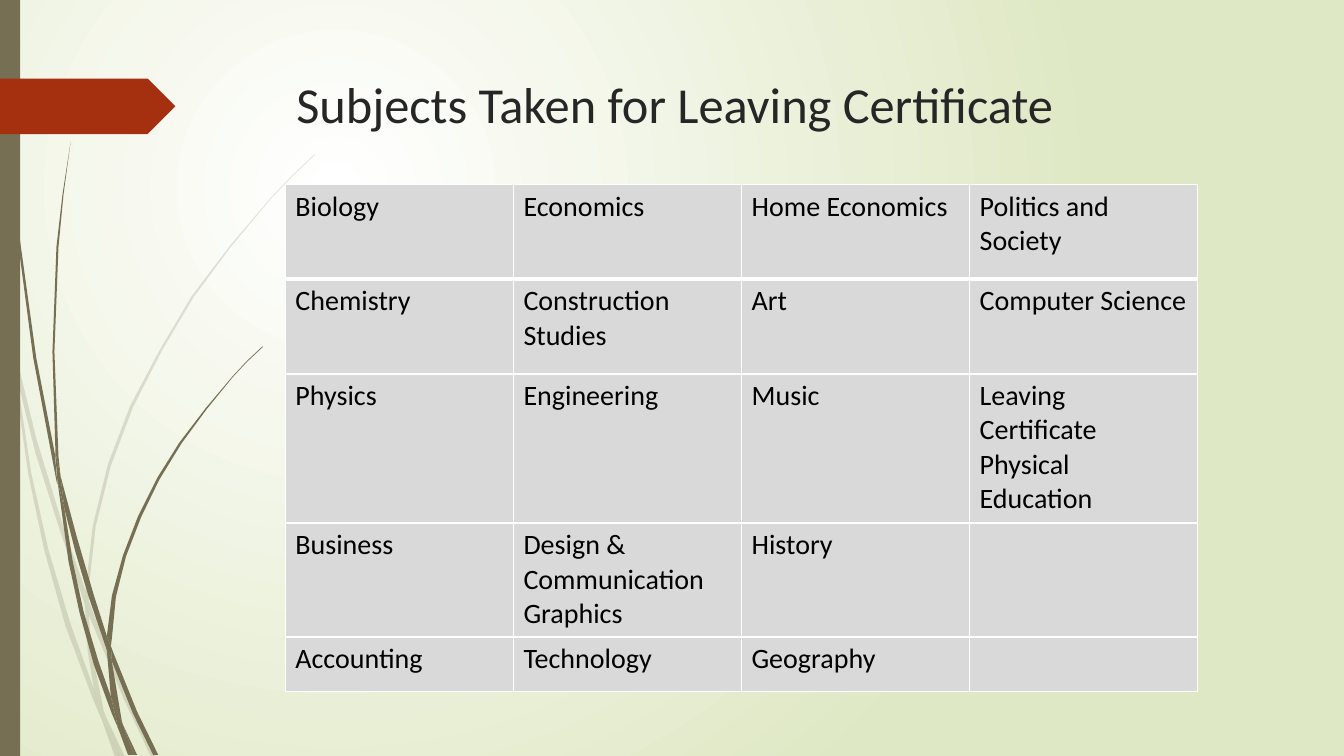
import pptx
import pptx.util
import pptx.dml.color
import pptx.enum.shapes
import pptx.oxml
import pptx.oxml.ns

Inches = pptx.util.Inches
Pt = pptx.util.Pt
qn = pptx.oxml.ns.qn
Shape = pptx.enum.shapes.MSO_SHAPE

COLORS = {
    "stem": "766F54", "tag": "A53010", "title": "262626", "text": "000000",
    "cell": "D9D9D9", "edge": "FFFFFF", "glow": "FFFFFF", "base": "DFE8C4",
}
FONTS = {
    "title": {"name": "Calibri", "size": Pt(36), "bold": False},
    "text": {"name": "Calibri", "size": Pt(20), "bold": False},
}
SUBJECTS = [
    ["Biology", "Economics", "Home Economics", "Politics and Society"],
    ["Chemistry", "Construction Studies", "Art", "Computer Science"],
    ["Physics", "Engineering", "Music", "Leaving Certificate Physical Education"],
    ["Business", "Design & Communication Graphics", "History", ""],
    ["Accounting", "Technology", "Geography", ""],
]
HEIGHTS = [0.94, 0.94, 1.48, 1.13, 0.54]

# Outlines of the grass blades, in inches
PALE = [
    [(0.11, 3.5), (0.09, 3.22), (0, 2.82), (0, 2.99), (0.1, 3.44)],
    [(0.58, 5.22), (0.84, 5.99), (0.85, 5.86), (0.62, 5.2), (0.36, 4.35),
     (0.14, 3.45), (0.17, 3.76), (0.35, 4.49)],
    [(0.92, 6.07), (0.88, 5.96), (0.88, 6.1), (1.23, 6.94), (1.5, 7.51),
     (1.55, 7.51), (1.27, 6.92)],
    [(1.19, 7.51), (1.24, 7.51), (1.05, 7.11)],
    [(0.93, 6.83), (0.7, 6.19), (0.48, 5.45), (0.31, 4.69), (0.17, 3.76),
     (0.11, 3.5), (0.28, 4.7), (0.44, 5.46), (0.65, 6.21), (0.92, 6.93),
     (1.01, 7.14), (0.99, 7.07)],
    [(0.84, 5.99), (0.87, 6.46), (0.93, 6.83), (0.96, 6.92), (1.05, 7.11),
     (1.03, 7.06), (0.91, 6.46), (0.88, 6.1), (0.88, 6.08)],
    [(0.88, 5.84), (0.95, 5.22), (1.1, 4.62), (1.32, 4.04), (1.6, 3.49),
     (1.92, 2.95), (2.29, 2.45), (2.68, 1.98), (2.9, 1.75), (3.12, 1.54),
     (3.12, 1.53), (2.89, 1.75), (2.68, 1.97), (2.28, 2.44), (1.9, 2.94),
     (1.58, 3.48), (1.29, 4.03), (1.07, 4.61), (0.92, 5.22), (0.85, 5.84),
     (0.85, 5.86), (0.88, 5.96)],
    [(1.01, 7.14), (1.14, 7.51), (1.19, 7.51)],
    [(0.88, 6.08), (0.88, 6.1), (0.88, 5.96), (0.85, 5.86), (0.84, 5.99)],
    [(0.96, 6.92), (0.93, 6.83), (0.99, 7.07), (1.01, 7.14), (1.19, 7.51),
     (1.05, 7.11)],
]
DARK = [
    [(0.07, 1.1), (0.17, 2.33), (0.33, 3.55), (0.56, 4.77), (0.57, 4.81),
     (0.55, 4.57), (0.55, 4.53), (0.36, 3.55), (0.19, 2.32), (0.08, 1.09),
     (0.05, 0.48), (0.04, 0), (0.03, 0), (0.04, 0.48)],
    [(0.88, 5.92), (1.06, 6.45), (1.06, 6.33), (1.06, 6.31), (0.93, 5.9),
     (0.76, 5.32), (0.6, 4.72), (0.64, 5.05), (0.75, 5.48)],
    [(1.13, 6.49), (1.1, 6.41), (1.11, 6.56), (1.32, 7.08), (1.52, 7.49),
     (1.57, 7.49), (1.36, 7.06)],
    [(1.1, 6.91), (0.98, 6.57), (0.83, 6.07), (0.72, 5.56), (0.64, 5.05),
     (0.57, 4.77), (0.68, 5.57), (0.79, 6.08), (0.93, 6.59), (1.11, 7.08),
     (1.17, 7.22), (1.16, 7.17)],
    [(0.6, 4.72), (0.58, 4.53), (0.54, 3.49), (0.58, 2.45), (0.63, 1.93),
     (0.7, 1.41), (0.62, 1.93), (0.56, 2.45), (0.52, 3.49), (0.55, 4.49)],
    [(1.33, 7.49), (1.36, 7.49), (1.22, 7.19)],
    [(0.57, 4.77), (0.64, 5.05), (0.6, 4.72), (0.55, 4.49), (0.55, 4.53)],
    [(1.11, 6.33), (1.15, 5.92), (1.25, 5.52), (1.4, 5.13), (1.58, 4.76),
     (1.8, 4.4), (2.05, 4.06), (2.31, 3.74), (2.45, 3.59), (2.61, 3.44),
     (2.6, 3.44), (2.45, 3.58), (2.31, 3.73), (2.04, 4.05), (1.78, 4.39),
     (1.56, 4.74), (1.37, 5.12), (1.22, 5.51), (1.11, 5.91), (1.06, 6.31),
     (1.1, 6.41)],
    [(1.17, 7.22), (1.27, 7.49), (1.31, 7.49)],
    [(1.06, 6.45), (1.1, 6.91), (1.16, 7.06), (1.22, 7.19), (1.21, 7.16),
     (1.11, 6.56), (1.09, 6.51)],
    [(1.06, 6.45), (1.09, 6.51), (1.11, 6.56), (1.1, 6.41), (1.06, 6.31),
     (1.06, 6.33)],
    [(1.16, 7.06), (1.1, 6.91), (1.16, 7.17), (1.17, 7.22), (1.3, 7.49),
     (1.33, 7.49), (1.22, 7.19)],
]


def tint(key):
    return pptx.dml.color.RGBColor.from_string(COLORS[key])


def paint(shape, key):
    shape.shadow.inherit = False
    shape.fill.solid()
    shape.fill.fore_color.rgb = tint(key)
    shape.line.fill.background()


def style(font, kind):
    for name, value in FONTS[kind].items():
        setattr(font, name, value)
    font.color.rgb = tint(kind)


def glow(slide):
    fill = slide.background.fill
    fill.gradient()
    for stop, key, place in zip(fill.gradient_stops, ("glow", "base"), (0, 1)):
        stop.color.rgb = tint(key)
        stop.position = place
    grad = slide.element.find(".//" + qn("a:gradFill"))
    grad.remove(grad.find(qn("a:lin")))
    grad.append(pptx.oxml.parse_xml(
        f'<a:path {pptx.oxml.ns.nsdecls("a")} path="circle"><a:fillToRect '
        'l="50000" t="50000" r="100000" b="100000"/></a:path>'))


def grass(slide, blades, alpha=None):
    group = slide.shapes.add_group_shape()
    for blade in blades:
        spots = [(Inches(x), Inches(y)) for x, y in blade]
        pen = group.shapes.build_freeform(*spots[0])
        pen.add_line_segments(spots[1:], close=True)
        shape = pen.convert_to_shape()
        paint(shape, "stem")
        if alpha:
            color = shape.element.spPr.find(".//" + qn("a:srgbClr"))
            color.append(pptx.oxml.parse_xml(
                f'<a:alpha {pptx.oxml.ns.nsdecls("a")} val="{alpha * 1000}"/>'))


def block(slide, kind, box, key):
    shape = slide.shapes.add_shape(kind, *map(Inches, box))
    paint(shape, key)


def title(slide, text):
    box = slide.shapes.add_textbox(*map(Inches, (2.84, 0.68, 9.75, 1.4)))
    box.text_frame.word_wrap = True
    line = box.text_frame.paragraphs[0]
    line.text = text
    style(line.font, "title")


def border(cell, row):
    props = cell._tc.get_or_add_tcPr()
    for spot, side in enumerate("LRTB"):
        thick = (row, side) in ((0, "B"), (1, "T"))
        props.insert(spot, pptx.oxml.parse_xml(
            f'<a:ln{side} {pptx.oxml.ns.nsdecls("a")} w="{Pt(3 if thick else 1)}">'
            f'<a:solidFill><a:srgbClr val="{COLORS["edge"]}"/></a:solidFill>'
            f'</a:ln{side}>'))


def grid(slide):
    size = map(Inches, (2.83, 1.83, 9.05, sum(HEIGHTS)))
    table = slide.shapes.add_table(len(SUBJECTS), len(SUBJECTS[0]), *size).table
    table.first_row = table.horz_banding = False
    for row, (height, names) in enumerate(zip(HEIGHTS, SUBJECTS)):
        table.rows[row].height = Inches(height)
        for col, name in enumerate(names):
            cell = table.cell(row, col)
            cell.text = name
            style(cell.text_frame.paragraphs[0].font, "text")
            cell.fill.solid()
            cell.fill.fore_color.rgb = tint("cell")
            border(cell, row)


def main():
    deck = pptx.Presentation()
    deck.slide_width, deck.slide_height = Inches(13.33), Inches(7.5)
    slide = deck.slides.add_slide(deck.slide_layouts[6])
    # Backdrop
    glow(slide)
    grass(slide, PALE, alpha=20)
    grass(slide, DARK)
    block(slide, Shape.RECTANGLE, (0, 0, 0.2, 7.5), "stem")
    block(slide, Shape.PENTAGON, (0, 0.78, 1.74, 0.55), "tag")
    # Content
    title(slide, "Subjects Taken for Leaving Certificate")
    grid(slide)
    deck.save("out.pptx")


if __name__ == "__main__":
    main()
